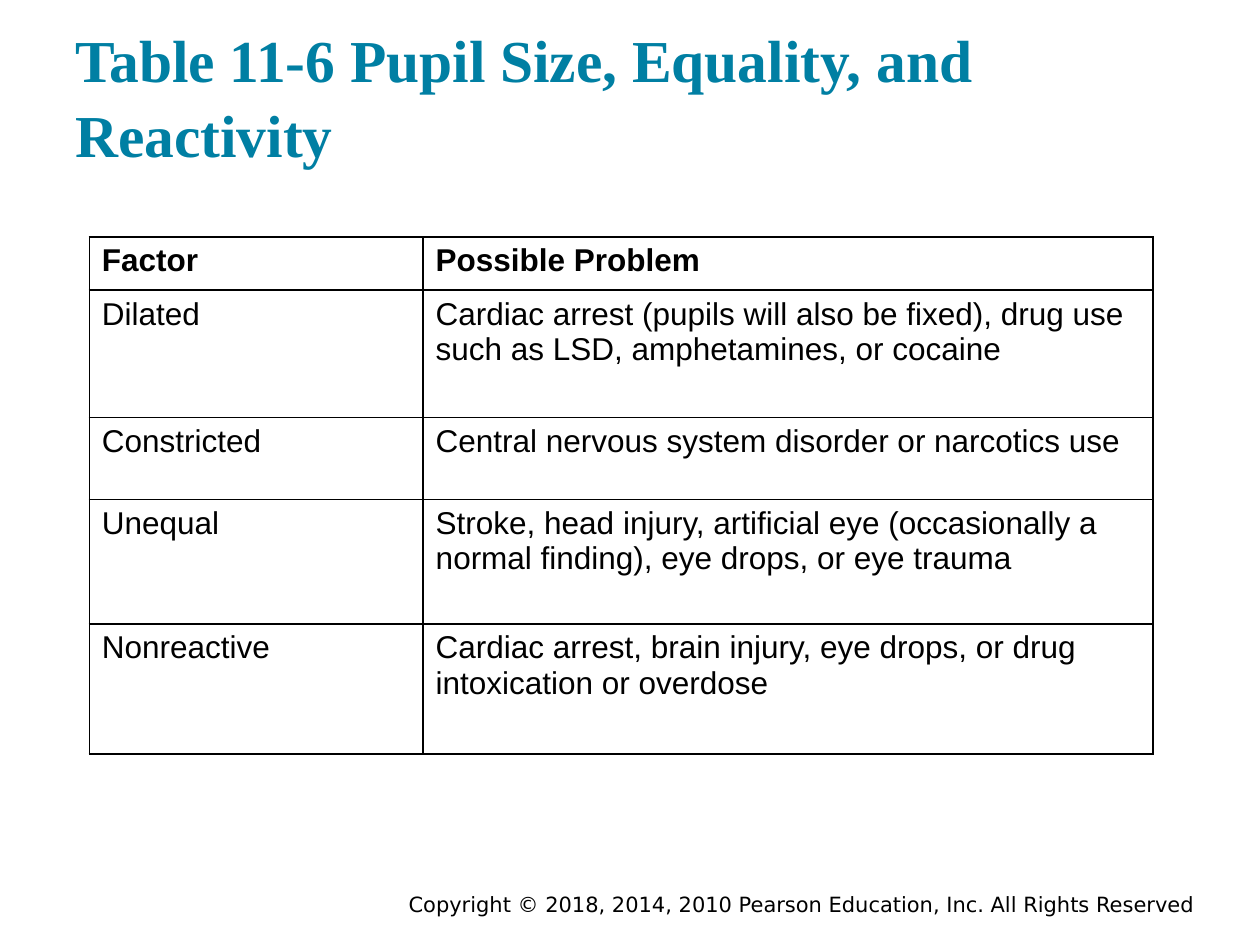
from lxml import etree
from pptx import Presentation
from pptx.dml.color import RGBColor
from pptx.enum import text
from pptx.oxml.ns import qn
from pptx.util import Cm, Pt

# Content
TITLE = "Table 11-6 Pupil Size, Equality, and Reactivity"
COPYRIGHT = "Copyright © 2018, 2014, 2010 Pearson Education, Inc. All Rights Reserved"
ROWS = [
    ("Factor", "Possible Problem"),
    ("Dilated", "Cardiac arrest (pupils will also be fixed), drug use such as LSD, "
                "amphetamines, or cocaine"),
    ("Constricted", "Central nervous system disorder or narcotics use"),
    ("Unequal", "Stroke, head injury, artificial eye (occasionally a normal finding), "
                "eye drops, or eye trauma"),
    ("Nonreactive", "Cardiac arrest, brain injury, eye drops, or drug intoxication or overdose"),
]
COLUMN_WIDTHS = [6.73, 14.71]
ROW_HEIGHTS = [1.07, 2.57, 1.65, 2.51, 2.62]

THEME = {
    "ink": "000000", "accent": "007FA3", "paper": "FFFFFF",
    "title_font": "Times New Roman", "body_font": "Arial", "footer_font": "DejaVu Sans",
    "title_size": 34, "body_size": 18, "footer_size": 12, "rule": 1,
}


def write(frame, words, font, size, color=THEME["ink"], bold=False,
          align=text.PP_ALIGN.LEFT, anchor=text.MSO_ANCHOR.TOP, spacing=None):
    frame.word_wrap = True
    frame.vertical_anchor = anchor
    para = frame.paragraphs[0]
    para.alignment = align
    para.line_spacing = spacing
    span = para.add_run()
    span.text = words
    span.font.name = font
    span.font.size = Pt(size)
    span.font.bold = bold
    span.font.color.rgb = RGBColor.from_string(color)


def add_borders(cell):
    properties = cell._tc.get_or_add_tcPr()
    for index, side in enumerate(("lnL", "lnR", "lnT", "lnB")):
        line = etree.Element(qn(f"a:{side}"), w=str(Pt(THEME["rule"])))
        fill = etree.SubElement(line, qn("a:solidFill"))
        etree.SubElement(fill, qn("a:srgbClr"), val=THEME["ink"])
        properties.insert(index, line)


deck = Presentation()
deck.slide_width, deck.slide_height = Cm(25.4), Cm(19.05)
page = deck.slides.add_slide(deck.slide_layouts[5])

# Title
title = page.shapes.title
title.left, title.top, title.width, title.height = Cm(1.27), Cm(0.61), Cm(22.86), Cm(3.05)
frame = title.text_frame
frame.margin_left = frame.margin_right = frame.margin_top = frame.margin_bottom = Cm(0.25)
frame.auto_size = text.MSO_AUTO_SIZE.NONE
write(frame, TITLE, THEME["title_font"], THEME["title_size"], color=THEME["accent"],
      bold=True, anchor=text.MSO_ANCHOR.BOTTOM, spacing=1.05)

# Table of pupil findings
table = page.shapes.add_table(len(ROWS), len(COLUMN_WIDTHS), Cm(1.8), Cm(4.78),
                              Cm(sum(COLUMN_WIDTHS)), Cm(sum(ROW_HEIGHTS))).table
table.horz_banding = False
for column, width in zip(table.columns, COLUMN_WIDTHS):
    column.width = Cm(width)
for row_index, (row, height, values) in enumerate(zip(table.rows, ROW_HEIGHTS, ROWS)):
    row.height = Cm(height)
    for cell, value in zip(row.cells, values):
        cell.fill.solid()
        cell.fill.fore_color.rgb = RGBColor.from_string(THEME["paper"])
        add_borders(cell)
        write(cell.text_frame, value, THEME["body_font"], THEME["body_size"],
              bold=row_index == 0)

# Copyright line
box = page.shapes.add_textbox(Cm(7.42), Cm(17.91), Cm(16.92), Cm(0.64))
write(box.text_frame, COPYRIGHT, THEME["footer_font"], THEME["footer_size"],
      align=text.PP_ALIGN.RIGHT, anchor=text.MSO_ANCHOR.MIDDLE)

deck.save("out.pptx")
